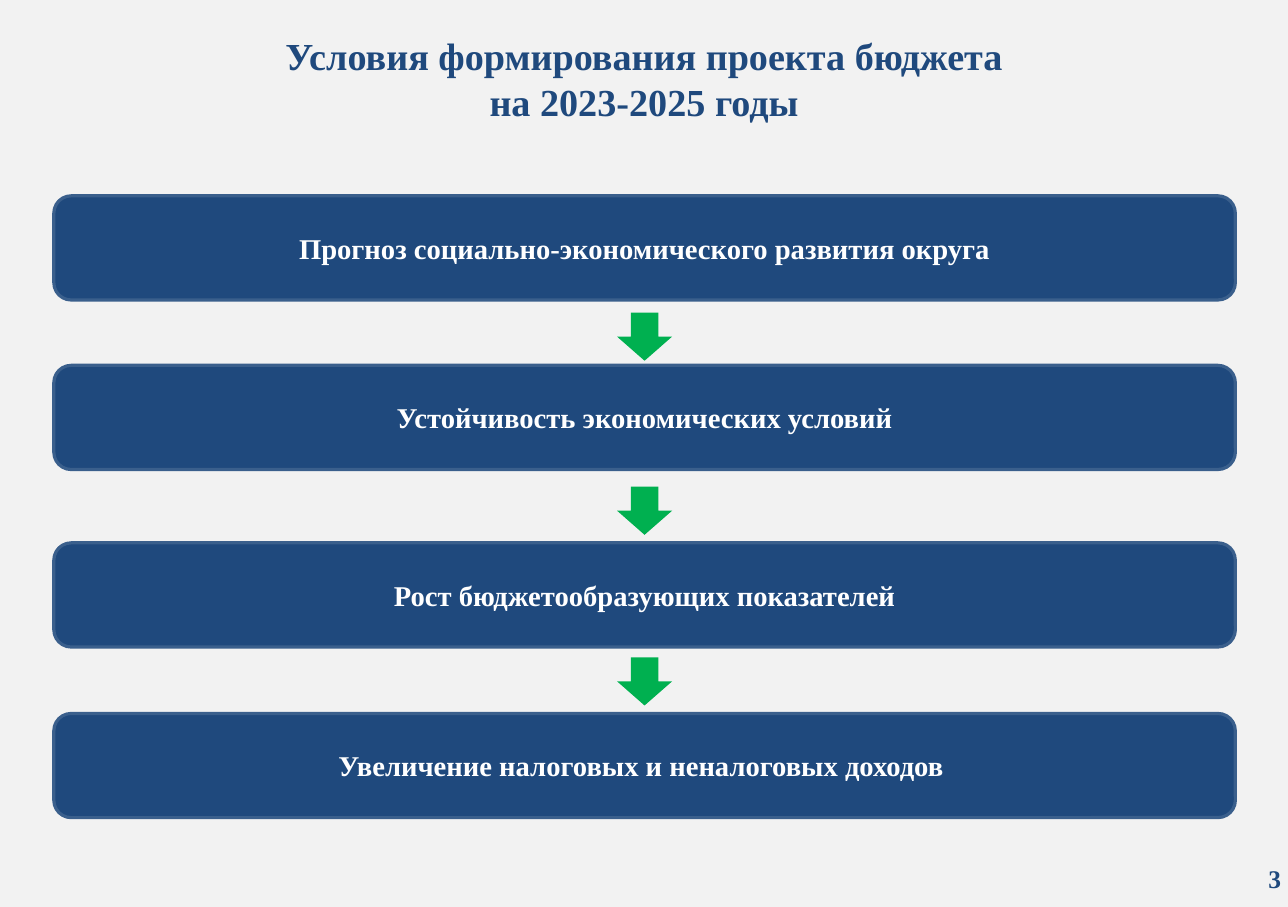
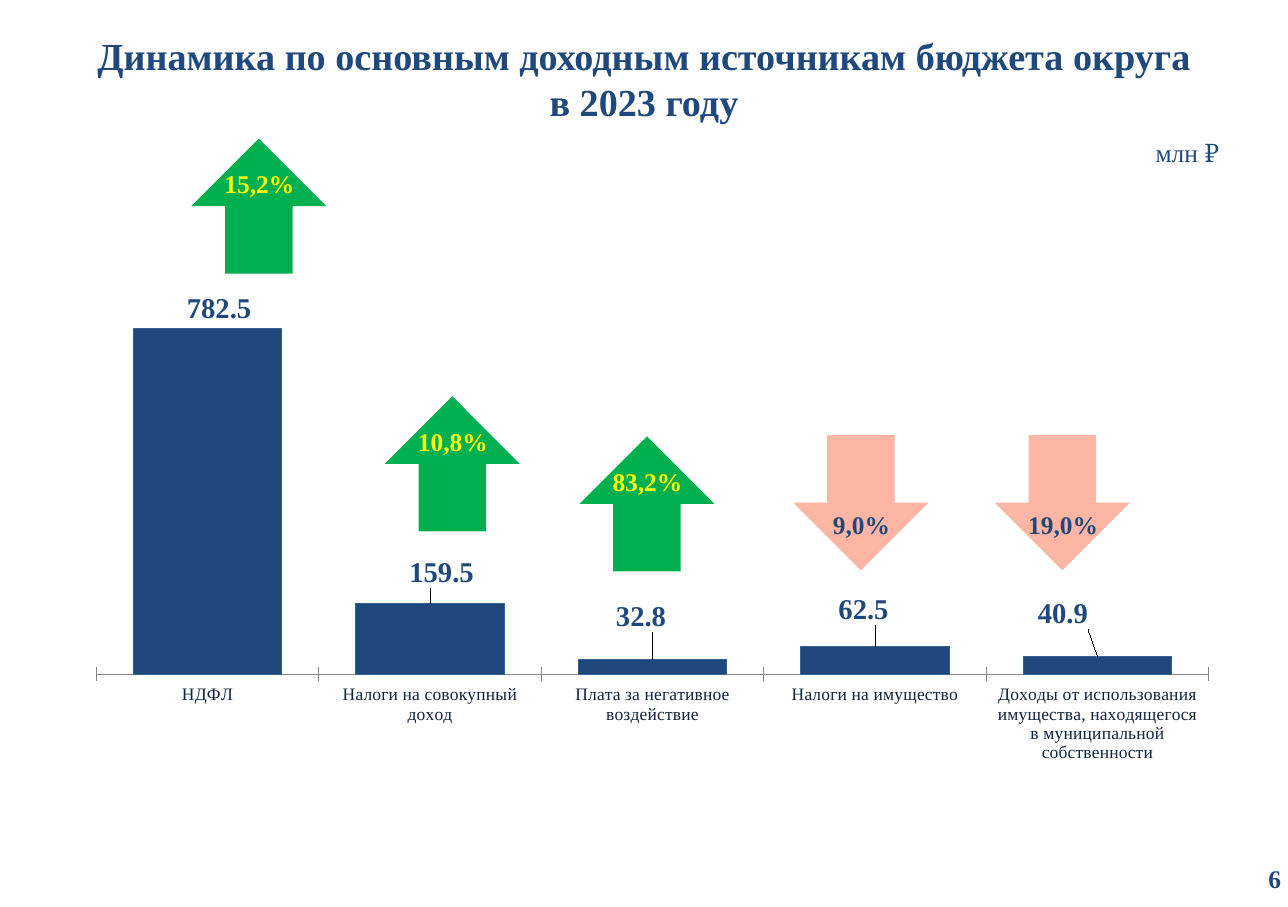
import pptx
import pptx.chart.data
import pptx.dml.color
import pptx.enum.chart
import pptx.enum.shapes
import pptx.enum.text
import pptx.oxml
import pptx.oxml.ns
import pptx.util

Inches = pptx.util.Inches
Pt = pptx.util.Pt
Shape = pptx.enum.shapes.MSO_SHAPE
Align = pptx.enum.text.PP_ALIGN
Anchor = pptx.enum.text.MSO_ANCHOR

NAVY, EDGE, INK = "1F497D", "3A5F8C", "0F243E"
GREEN, PINK, YELLOW, WHITE = "00B050", "FFB5A3", "FFFF00", "FFFFFF"
FACE = "Times New Roman"


def color(code):
    return pptx.dml.color.RGBColor.from_string(code)


def style(font, size, code=NAVY, bold=False):
    font.name, font.size, font.bold = FACE, Pt(size), bold
    font.color.rgb = color(code)


def write(shape, text, size=16, code=NAVY, bold=True, align=Align.CENTER,
          anchor=Anchor.MIDDLE, space=None):
    """Fill a shape with one paragraph; a newline is a line break."""
    frame = shape.text_frame
    frame.word_wrap = True
    frame.auto_size = pptx.enum.text.MSO_AUTO_SIZE.NONE
    frame.vertical_anchor = anchor
    frame.margin_left = frame.margin_right = 0
    frame.margin_top = frame.margin_bottom = 0
    para = frame.paragraphs[0]
    para.text = text
    para.alignment = align
    if space:
        para.line_spacing = space
    for run in para.runs:
        style(run.font, size, code, bold)


def layout(x, y, w=None, h=None):
    """Manual chart layout; with a size it places the inner plot area."""
    parts = [("xMode", "edge"), ("yMode", "edge")] if w else []
    if w:
        parts.insert(0, ("layoutTarget", "inner"))
    parts += [("x", x), ("y", y)]
    if w:
        parts += [("w", w), ("h", h)]
    body = "".join(f'<c:{tag} val="{val}"/>' for tag, val in parts)
    return pptx.oxml.parse_xml(
        f'<c:layout {pptx.oxml.ns.nsdecls("c")}>'
        f'<c:manualLayout>{body}</c:manualLayout></c:layout>')


class Deck:
    def __init__(self):
        self.file = pptx.Presentation()
        self.file.slide_width = Inches(11.25)
        self.file.slide_height = Inches(7.92)

    def start(self, title, number, back):
        """Add a slide with its background, title and page number."""
        self.slide = self.file.slides.add_slide(self.file.slide_layouts[5])
        fill = self.slide.background.fill
        fill.solid()
        fill.fore_color.rgb = color(back)
        head = self.slide.shapes.title
        head.left, head.top = Inches(0), Inches(0.22)
        head.width, head.height = Inches(11.25), Inches(0.92)
        write(head, title, size=24)
        self.text(number, 10.71, 7.45, 0.48, 0.44, align=Align.RIGHT)

    def text(self, text, x, y, w, h, home=None, **form):
        shapes = (home or self.slide).shapes
        box = shapes.add_textbox(Inches(x), Inches(y), Inches(w), Inches(h))
        write(box, text, **form)

    def shape(self, kind, x, y, w, h, fill, line=None, home=None):
        shapes = (home or self.slide).shapes
        item = shapes.add_shape(kind, Inches(x), Inches(y),
                                Inches(w), Inches(h))
        item.shadow.inherit = False
        item.fill.solid()
        item.fill.fore_color.rgb = color(fill)
        if line:
            item.line.color.rgb = color(line)
            item.line.width = Pt(2)
        else:
            item.line.fill.background()
        return item

    def badge(self, text, x, y, rise):
        """Arrow with a percentage in its head: green up or pink down."""
        group = self.slide.shapes.add_group_shape()
        arrow = self.shape(Shape.DOWN_ARROW, x, y, 1.18, 1.18,
                           GREEN if rise else PINK, home=group)
        arrow.rotation = 180 if rise else 0
        self.text(text, x + 0.17, y + (0.22 if rise else 0.6), 0.85, 0.35,
                  home=group, code=YELLOW if rise else NAVY)

    def chart(self, rows, x, y, w, h):
        """Column chart from rows of name, value and label shift."""
        data = pptx.chart.data.CategoryChartData(number_format="#,##0.0")
        data.categories = [row[0] for row in rows]
        data.add_series("Series 1", [row[1] for row in rows])
        kind = pptx.enum.chart.XL_CHART_TYPE.COLUMN_CLUSTERED
        chart = self.slide.shapes.add_chart(
            kind, Inches(x), Inches(y), Inches(w), Inches(h), data).chart
        chart.has_legend = chart.has_title = False
        style(chart.font, 10, INK)
        self.axes(chart)
        area = chart._chartSpace.chart.plotArea
        for old in area.findall(pptx.oxml.ns.qn("c:layout")):
            area.remove(old)
        area.insert(0, layout(0.019, 0.014, 0.963, 0.711))
        plot = chart.plots[0]
        plot.gap_width, plot.vary_by_categories = 50, False
        bars = plot.series[0]
        bars.format.fill.solid()
        bars.format.fill.fore_color.rgb = color(NAVY)
        bars.format.line.color.rgb = color("376092")
        bars.format.line.width = Pt(0.75)
        labels = bars.data_labels
        labels.show_value = True
        labels.number_format = "#,##0.0"
        labels.number_format_is_linked = False
        style(labels.font, 18, bold=True)
        for i, (_, _, shift) in enumerate(rows):
            label = bars.points[i].data_label
            style(label.font, 18, bold=True)
            label.position = pptx.enum.chart.XL_LABEL_POSITION.OUTSIDE_END
            label._get_or_add_dLbl().insert(1, layout(*shift))

    def axes(self, chart):
        mark = pptx.enum.chart.XL_TICK_MARK
        names, scale = chart.category_axis, chart.value_axis
        names.major_tick_mark = mark.CROSS
        names.format.line.color.rgb = color("868686")
        style(names.tick_labels.font, 11, INK)
        scale.minimum_scale, scale.maximum_scale = 0, 900
        scale.has_major_gridlines = False
        scale.visible = False


def terms(deck):
    deck.start("Условия формирования проекта бюджета\nна 2023-2025 годы",
               "3", "F2F2F2")
    steps = [
        ("Прогноз социально-экономического развития округа", 1.71),
        ("Устойчивость экономических условий", 3.19),
        ("Рост бюджетообразующих показателей", 4.74),
        ("Увеличение налоговых и неналоговых доходов ", 6.23),
    ]
    for text, top in steps:
        bar = deck.shape(Shape.ROUNDED_RECTANGLE, 0.47, top, 10.32, 0.91,
                         NAVY, EDGE)
        write(bar, text, size=18, code=WHITE)
    for top in (2.73, 4.25, 5.74):
        deck.shape(Shape.DOWN_ARROW, 5.39, top, 0.48, 0.42, GREEN)


def trend(deck):
    deck.start("Динамика по основным доходным источникам бюджета округа\n"
               "в 2023 году", "6", WHITE)
    deck.text("млн ₽", 9.38, 1.25, 1.27, 0.33, bold=False,
              align=Align.RIGHT, anchor=Anchor.TOP, space=0.8)
    deck.chart([
        ("НДФЛ", 782.5, (0.01, 0)),
        ("Налоги на совокупный доход", 159.5, (0.01, -0.02)),
        ("Плата за негативное воздействие", 32.8, (-0.01, -0.04)),
        ("Налоги на имущество", 62.5, (-0.01, -0.03)),
        ("Доходы от использования имущества, находящегося "
         "в муниципальной собственности", 40.9, (-0.03, -0.04)),
    ], 0.65, 2.35, 10.09, 4.88)
    for text, x, y, rise in [
        ("15,2%", 1.67, 1.21, True),
        ("10,8%", 3.36, 3.46, True),
        ("83,2%", 5.06, 3.81, True),
        ("9,0%", 6.93, 3.8, False),
        ("19,0%", 8.69, 3.8, False),
    ]:
        deck.badge(text, x, y, rise)


def main():
    deck = Deck()
    terms(deck)
    trend(deck)
    deck.file.save("out.pptx")


if __name__ == "__main__":
    main()
